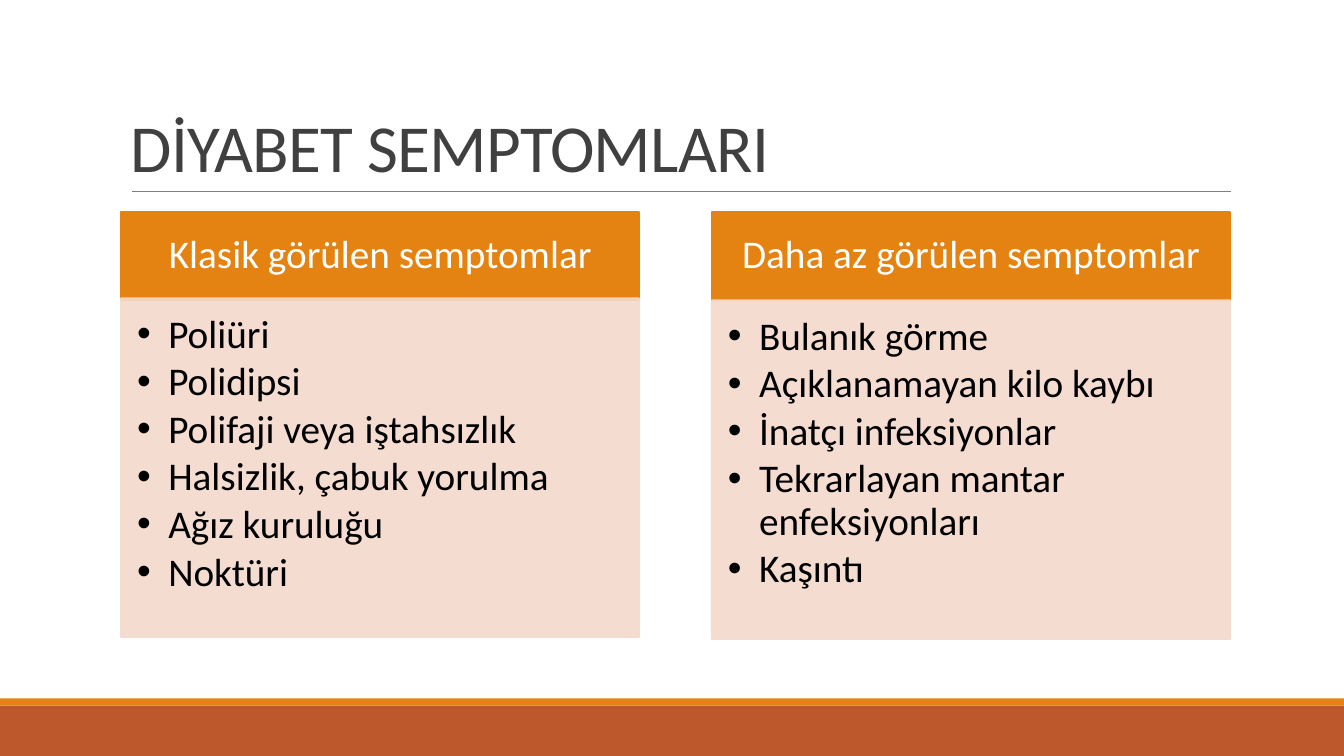
from dataclasses import dataclass

from lxml import etree
from pptx import Presentation
from pptx import util as u
from pptx.dml.color import RGBColor
from pptx.enum import shapes, text
from pptx.oxml.ns import qn

PX = 9144


@dataclass(frozen=True)
class Theme:
    """Colours, font and type sizes of the slide."""
    font: str = "Calibri"
    orange: str = "E48312"
    rust: str = "BD582C"
    blush: str = "F5D9CC"
    rule: str = "808080"
    title_ink: str = "404040"
    white: str = "FFFFFF"
    black: str = "000000"
    title_size: int = 48
    text_size: int = 28


THEME = Theme()

COLUMNS = [
    ("Klasik görülen semptomlar", 296,
     ["Poliüri", "Polidipsi", "Polifaji veya iştahsızlık",
      "Halsizlik, çabuk yorulma", "Ağız kuruluğu", "Noktüri"]),
    ("Daha az görülen semptomlar", 298,
     ["Bulanık görme", "Açıklanamayan kilo kaybı", "İnatçı infeksiyonlar",
      "Tekrarlayan mantar enfeksiyonları", "Kaşıntı"]),
]


def px(*lengths):
    """Turn pixel lengths into EMU."""
    return [u.Emu(length * PX) for length in lengths]


def rgb(colour):
    """Read a hex colour."""
    return RGBColor.from_string(colour)


def set_alpha(fill_parent, percent):
    """Make the solid fill under an element partly transparent."""
    colour = fill_parent.find(qn("a:solidFill"))[0]
    etree.SubElement(colour, qn("a:alpha")).set("val", str(percent * 1000))


def add_block(slide, box, colour, outlined=False, alpha=100):
    """Draw a filled rectangle, optionally outlined and transparent."""
    block = slide.shapes.add_shape(shapes.MSO_SHAPE.RECTANGLE, *px(*box))
    block.shadow.inherit = False
    block.fill.solid()
    block.fill.fore_color.rgb = rgb(colour)
    if outlined:
        block.line.color.rgb = rgb(colour)
        block.line.width = u.Pt(1.25)
    else:
        block.line.fill.background()
    if alpha < 100:
        properties = block.fill._xPr
        set_alpha(properties, alpha)
        set_alpha(properties.find(qn("a:ln")), alpha)
    return block


def set_frame(shape, anchor, insets):
    """Set wrapping, anchor and left, top, right, bottom insets."""
    frame = shape.text_frame
    frame.word_wrap = True
    frame.vertical_anchor = anchor
    (frame.margin_left, frame.margin_top,
     frame.margin_right, frame.margin_bottom) = px(*insets)
    return frame


def write(paragraph, words, size, colour, spacing, align=text.PP_ALIGN.LEFT):
    """Write one run into a paragraph."""
    paragraph.alignment = align
    paragraph.line_spacing = spacing
    run = paragraph.add_run()
    run.text = words
    run.font.name = THEME.font
    run.font.size = u.Pt(size)
    run.font.color.rgb = rgb(colour)
    return run


def add_bullet(paragraph):
    """Give a paragraph a hanging round bullet."""
    properties = paragraph._p.get_or_add_pPr()
    indent = 31 * PX
    properties.set("marL", str(indent))
    properties.set("indent", str(-indent))
    etree.SubElement(properties, qn("a:buFont")).set("typeface", "Arial")
    etree.SubElement(properties, qn("a:buChar")).set("char", "•")


def add_title(slide, words):
    """Add the slide title and the rule under it."""
    rule = slide.shapes.add_connector(
        shapes.MSO_CONNECTOR.STRAIGHT, *px(131, 190, 1221, 190))
    rule.line.color.rgb = rgb(THEME.rule)
    rule.line.width = u.Pt(0.5)
    etree.SubElement(rule._element.spPr, qn("a:effectLst"))
    title = slide.shapes.add_textbox(*px(120, 31, 1100, 159))
    frame = set_frame(title, text.MSO_ANCHOR.BOTTOM, (10, 5, 10, 5))
    run = write(frame.paragraphs[0], words, THEME.title_size,
                THEME.title_ink, 0.85)
    run.font._element.set("spc", "-50")


def add_column(slide, left, heading, body_top, symptoms):
    """Add a heading bar above its bulleted symptom panel."""
    width = 514
    bar = add_block(slide, (left, 210, width, 88), THEME.orange, True)
    frame = set_frame(bar, text.MSO_ANCHOR.MIDDLE, (22, 12, 22, 12))
    write(frame.paragraphs[0], heading, THEME.text_size, THEME.white, 0.9,
          text.PP_ALIGN.CENTER)
    panel = add_block(slide, (left, body_top, width, 336), THEME.blush, True, 90)
    frame = set_frame(panel, text.MSO_ANCHOR.TOP, (16, 16, 22, 24))
    for index, symptom in enumerate(symptoms):
        paragraph = frame.add_paragraph() if index else frame.paragraphs[0]
        write(paragraph, symptom, THEME.text_size, THEME.black, 0.9)
        paragraph.space_after = u.Pt(3.7)
        add_bullet(paragraph)


def main():
    """Build the diabetes symptoms slide."""
    deck = Presentation()
    deck.slide_width, deck.slide_height = px(1333, 750)
    slide = deck.slides.add_slide(deck.slide_layouts[6])
    add_block(slide, (0, 700, 1333, 50), THEME.rust)
    add_block(slide, (0, 693, 1333, 7), THEME.orange)
    add_title(slide, "DİYABET SEMPTOMLARI")
    for index, column in enumerate(COLUMNS):
        add_column(slide, 120 + index * 586, *column)
    deck.save("out.pptx")


if __name__ == "__main__":
    main()
